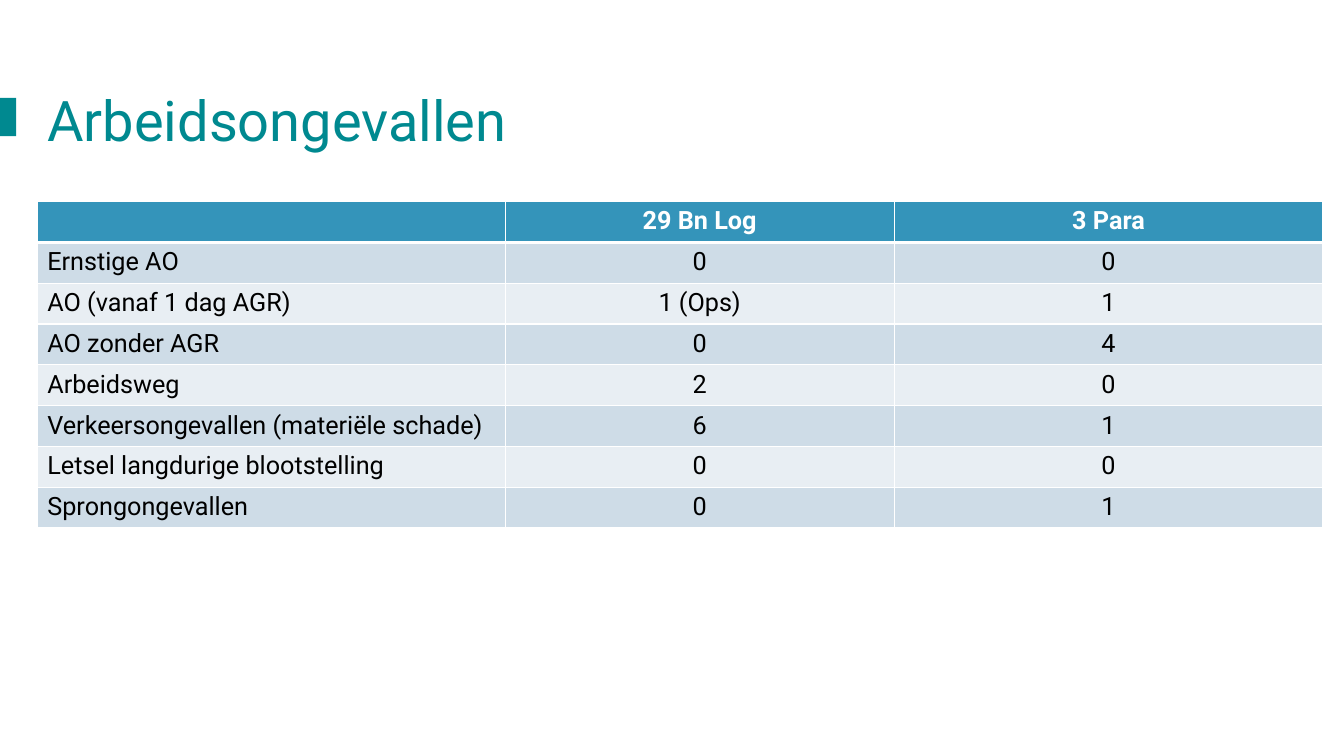
from lxml.etree import SubElement
from pptx import Presentation
from pptx.dml.color import RGBColor
from pptx.enum.shapes import MSO_SHAPE as Preset
from pptx.enum.text import MSO_ANCHOR as Anchor, PP_ALIGN as Align
from pptx.oxml.ns import qn
from pptx.util import Inches, Pt

TEAL, BLUE, WHITE, BLACK = "008990", "3494BA", "FFFFFF", "000000"
BANDS = ("CEDCE7", "E8EEF3")
COLUMN_WIDTHS = (4.64, 3.86, 4.25)
ROW_HEIGHT = 0.405
ACCIDENTS = (
    ("", "29 Bn Log", "3 Para"),
    ("Ernstige AO", "0", "0"),
    ("AO (vanaf 1 dag AGR)", "1 (Ops)", "1"),
    ("AO zonder AGR", "0", "4"),
    ("Arbeidsweg", "2", "0"),
    ("Verkeersongevallen (materiële schade)", "6", "1"),
    ("Letsel langdurige blootstelling", "0", "0"),
    ("Sprongongevallen", "0", "1"),
)


def paint(fill, color):
    fill.solid()
    fill.fore_color.rgb = RGBColor.from_string(color)


class SlideBuilder:
    def __init__(self, slide, font_name):
        self.slide = slide
        self.font_name = font_name

    def add_run(self, paragraph, text, size, color, bold=False):
        run = paragraph.add_run()
        run.text = text
        run.font.name = self.font_name
        run.font.size = Pt(size)
        run.font.bold = bold
        paint(run.font.fill, color)

    def accent(self, left, top, width, height):
        shape = self.slide.shapes.add_shape(
            Preset.RECTANGLE, Inches(left), Inches(top), Inches(width), Inches(height))
        shape.shadow.inherit = False
        paint(shape.fill, TEAL)
        shape.line.fill.background()

    def title(self, text, left, top, width, height):
        title = self.slide.shapes.title
        title.left, title.top = Inches(left), Inches(top)
        title.width, title.height = Inches(width), Inches(height)
        title.text_frame.vertical_anchor = Anchor.MIDDLE
        title.text_frame.word_wrap = True
        paragraph = title.text_frame.paragraphs[0]
        paragraph.alignment = Align.LEFT
        paragraph.line_spacing = 0.9
        self.add_run(paragraph, text, 40, TEAL)

    def border(self, cell, side, points):
        """Draw a white line on one side (L, R, T or B) of a cell."""
        line = SubElement(cell._tc.get_or_add_tcPr(), qn(f"a:ln{side}"), w=str(Pt(points)))
        fill = SubElement(line, qn("a:solidFill"))
        SubElement(fill, qn("a:srgbClr"), val=WHITE)

    def cell(self, cell, text, row, column):
        header = row == 0
        for side in "LRTB":
            thick = (header and side == "B") or (row == 1 and side == "T")
            self.border(cell, side, 3 if thick else 1)
        paint(cell.fill, BLUE if header else BANDS[(row - 1) % 2])
        paragraph = cell.text_frame.paragraphs[0]
        paragraph.alignment = Align.CENTER if header or column else Align.LEFT
        if text:
            self.add_run(paragraph, text, 18, WHITE if header else BLACK, header)

    def table(self, rows, left, top):
        table = self.slide.shapes.add_table(
            len(rows), len(COLUMN_WIDTHS), Inches(left), Inches(top),
            Inches(sum(COLUMN_WIDTHS)), Inches(ROW_HEIGHT * len(rows))).table
        for column, width in zip(table.columns, COLUMN_WIDTHS):
            column.width = Inches(width)
        for row, texts in enumerate(rows):
            table.rows[row].height = Inches(ROW_HEIGHT)
            for column, text in enumerate(texts):
                self.cell(table.cell(row, column), text, row, column)


def main():
    presentation = Presentation()
    presentation.slide_width, presentation.slide_height = Inches(13.33), Inches(7.5)
    title_only = presentation.slide_layouts[5]
    builder = SlideBuilder(presentation.slides.add_slide(title_only), "Roboto")
    builder.accent(0, 0.97, 0.16, 0.38)
    builder.table(ACCIDENTS, 0.37, 2)
    builder.title("Arbeidsongevallen", 0.37, 0.74, 11.5, 0.96)
    presentation.save("out.pptx")


if __name__ == "__main__":
    main()
